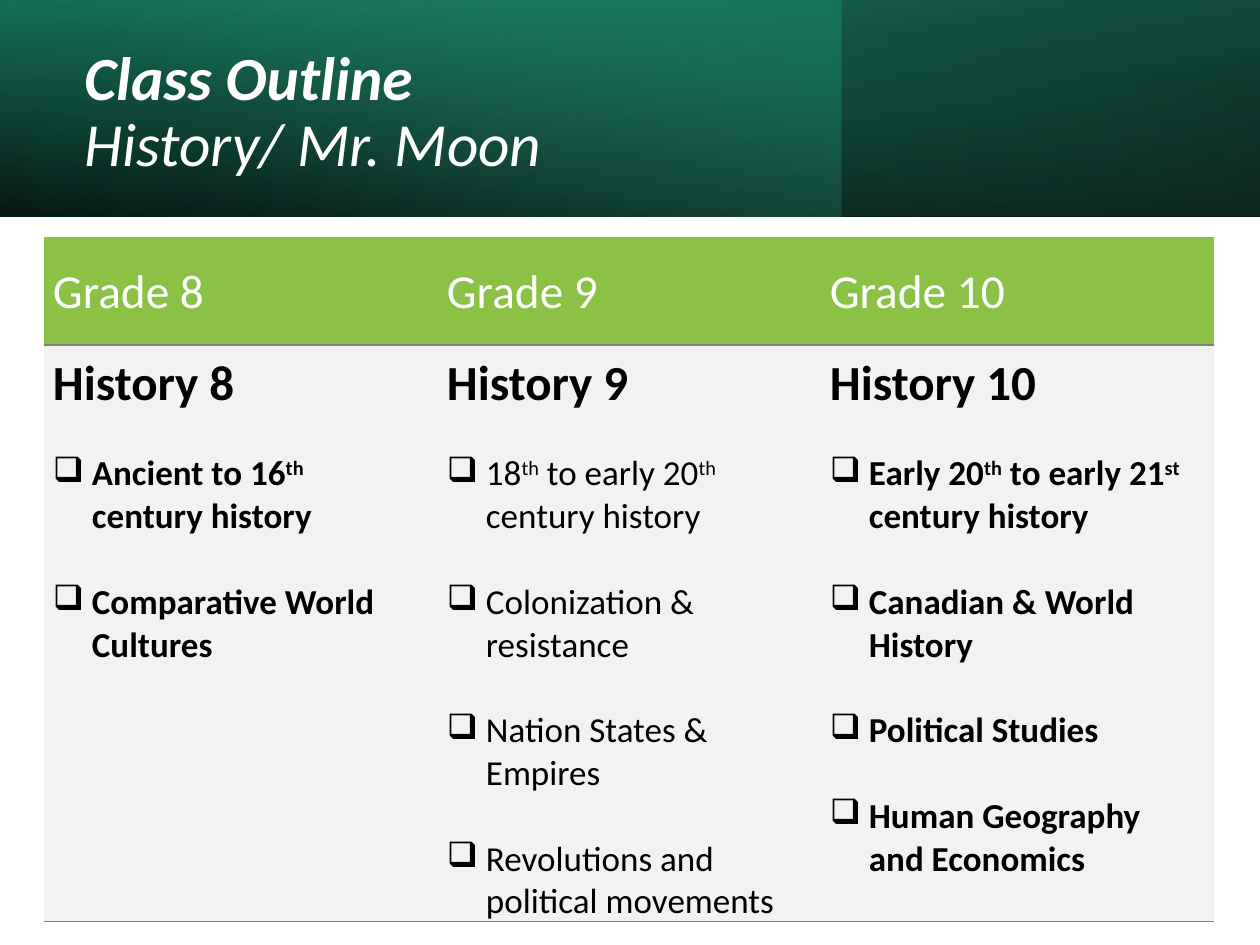
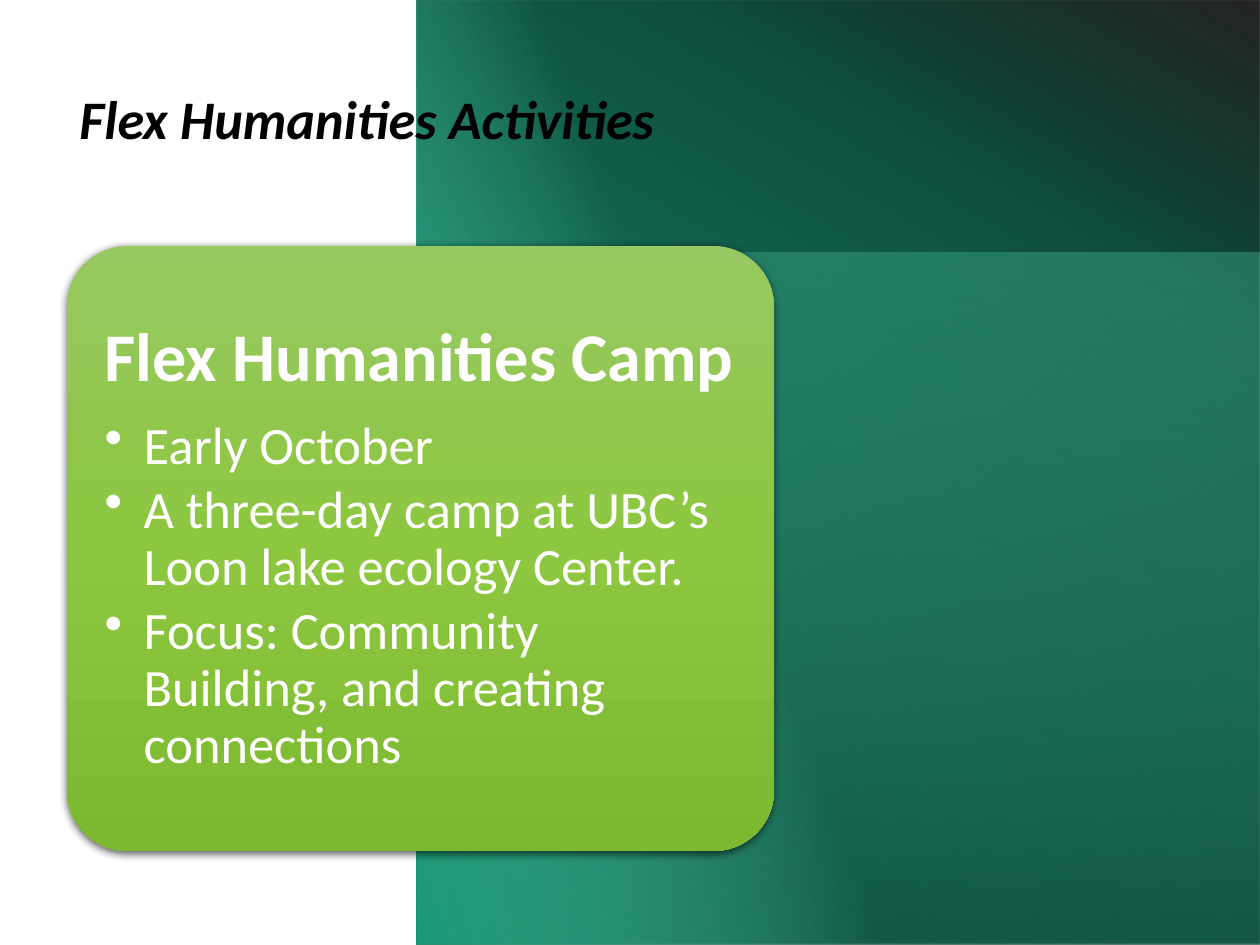
"""Build a two-slide deck: a history class outline and a humanities camp card."""
from dataclasses import dataclass

from pptx import Presentation
from pptx.dml.color import RGBColor
from pptx.enum.shapes import MSO_SHAPE
from pptx.enum.text import MSO_ANCHOR, PP_ALIGN
from pptx.oxml import parse_xml
from pptx.oxml.ns import nsdecls, qn
from pptx.util import Pt


@dataclass(frozen=True)
class Theme:
    font: str = "Calibri"
    white: str = "FFFFFF"
    black: str = "000000"
    deep: str = "16745A"
    green: str = "1D9A78"
    mint: str = "5AE0BB"
    forest: str = "0E4D3C"
    header: str = "8BC145"
    body: str = "F2F2F2"
    rule: str = "808080"
    card: tuple = ("98C862", "8CC73F", "7DB831")
    outline_title: int = 35
    camp_title: int = 31
    grade: int = 27
    course: int = 28
    topic: int = 20
    card_title: int = 39
    card_text: int = 30


theme = Theme()
PX = 914400 / 126
INDENT = 39


def paint_gradient(shape, stops, angle):
    """Fill a shape with (position, colour, opacity) stops, without line or shadow."""
    shape.shadow.inherit = False
    shape.line.fill.background()
    shape.fill.gradient()
    properties = shape._element.spPr
    marks = "".join(
        f'<a:gs pos="{position * 1000}"><a:srgbClr val="{colour}">'
        f'<a:alpha val="{opacity * 1000}"/></a:srgbClr></a:gs>'
        for position, colour, opacity in stops)
    gradient = parse_xml(
        f'<a:gradFill {nsdecls("a")} rotWithShape="1"><a:gsLst>{marks}</a:gsLst>'
        f'<a:lin ang="{angle * 60000}" scaled="0"/></a:gradFill>')
    properties.replace(properties.find(qn("a:gradFill")), gradient)


def add_bullet(para, glyph):
    """Give a paragraph a hanging bullet."""
    properties = para._p.get_or_add_pPr()
    properties.set("marL", str(round(INDENT * PX)))
    properties.set("indent", str(round(-INDENT * PX)))
    properties.append(parse_xml(f'<a:buChar {nsdecls("a")} char="{glyph}"/>'))


deck = Presentation()
deck.slide_width = round(1260 * PX)
deck.slide_height = round(945 * PX)

outline_layers = [
    ((0, 0, 1260, 217), 180, True, 100, [(0, theme.black, 96), (100, theme.deep, 100)]),
    ((0, 0, 841, 217), 0, False, 140, [(0, theme.green, 41), (74, theme.mint, 0)]),
    ((0, 0, 1260, 217), 0, True, 260, [(0, theme.black, 63), (78, theme.green, 15)]),
]
camp_layers = [
    ((417, 0, 843, 945), 0, False, 300,
     [(2, theme.green, 100), (78, theme.forest, 100), (100, theme.black, 85)]),
    ((417, 253, 843, 692), 0, True, 80, [(0, theme.mint, 30), (100, theme.black, 44)]),
    ((302, 115, 945, 715), 90, True, 110, [(56, theme.mint, 0), (100, theme.green, 100)]),
]
slides = [
    (outline_layers, (72, 34, 730, 160), theme.outline_title, theme.white,
     ["Class Outline", "History/ Mr. Moon"]),
    (camp_layers, (67, 44, 1126, 156), theme.camp_title, theme.black,
     ["Flex Humanities Activities"]),
]
pages = []
for layers, title_place, title_size, title_colour, title_lines in slides:
    page = deck.slides.add_slide(deck.slide_layouts[6])
    pages.append(page)
    for place, rotation, flipped, angle, stops in layers:
        layer = page.shapes.add_shape(
            MSO_SHAPE.RECTANGLE, *[round(length * PX) for length in place])
        paint_gradient(layer, stops, angle)
        layer.rotation = rotation
        if flipped:
            layer._element.spPr.find(qn("a:xfrm")).set("flipH", "1")

    title = page.shapes.add_textbox(*[round(length * PX) for length in title_place])
    title.text_frame.word_wrap = True
    title.text_frame.vertical_anchor = MSO_ANCHOR.MIDDLE
    para = title.text_frame.paragraphs[0]
    para.line_spacing = 0.9
    para.font.name = theme.font
    para.font.size = Pt(title_size)
    para.font.italic = True
    para.font.color.rgb = RGBColor.from_string(title_colour)
    for number, line in enumerate(title_lines):
        if number:
            para.add_line_break()
        span = para.add_run()
        span.text = line
        span.font.bold = number == 0

outline_page, camp_page = pages

courses = [
    ("Grade 8", "History 8", 394, True,
     ["Ancient to 16^th^ century history", "Comparative World Cultures"]),
    ("Grade 9", "History 9", 383, False,
     ["18^th^ to early 20^th^ century history", "Colonization & resistance",
      "Nation States & Empires", "Revolutions and political movements"]),
    ("Grade 10", "History 10", 393, True,
     ["Early 20^th^ to early 21^st^ century history", "Canadian & World History",
      "Political Studies", "Human Geography and Economics"]),
]
table = outline_page.shapes.add_table(
    2, len(courses), *[round(length * PX) for length in (44, 237, 1170, 682)]).table
table.first_row = False
table.horz_banding = False
table._tbl.tblPr.find(qn("a:tableStyleId")).text = "{2D5ABB26-0587-4C30-8999-92F81FD0307C}"
table.rows[0].height = round(108 * PX)
table.rows[1].height = round(574 * PX)

for column, (grade, course, width, emphasized, topics) in enumerate(courses):
    table.columns[column].width = round(width * PX)
    grade_cell, topic_cell = table.cell(0, column), table.cell(1, column)
    for cell, fill in ((grade_cell, theme.header), (topic_cell, theme.body)):
        cell.margin_left = cell.margin_top = round(9 * PX)
        cell.margin_right = round(28 * PX)
        cell.margin_bottom = round(6 * PX)
        cell.fill.solid()
        cell.fill.fore_color.rgb = RGBColor.from_string(fill)
    for position, side in enumerate(("lnT", "lnB")):
        topic_cell._tc.get_or_add_tcPr().insert(position, parse_xml(
            f'<a:{side} {nsdecls("a")} w="{Pt(0.75)}"><a:solidFill>'
            f'<a:srgbClr val="{theme.rule}"/></a:solidFill></a:{side}>'))

    grade_cell.vertical_anchor = MSO_ANCHOR.MIDDLE
    para = grade_cell.text_frame.paragraphs[0]
    para.text = grade
    para.font.name = theme.font
    para.font.size = Pt(theme.grade)
    para.font.color.rgb = RGBColor.from_string(theme.white)

    frame = topic_cell.text_frame
    for number, text in enumerate([course] + topics):
        para = frame.add_paragraph() if number else frame.paragraphs[0]
        para.font.name = theme.font
        para.font.size = Pt(theme.topic if number else theme.course)
        para.font.bold = emphasized or number == 0
        para.font.color.rgb = RGBColor.from_string(theme.black)
        if number:
            para.space_before = Pt(22 if number == 1 else 24.4)
            add_bullet(para, "❑")
        for part, words in enumerate(text.split("^")):
            span = para.add_run()
            span.text = words
            if part % 2:
                span._r.get_or_add_rPr().set("baseline", "30000")

card = camp_page.shapes.add_shape(
    MSO_SHAPE.ROUNDED_RECTANGLE, *[round(length * PX) for length in (67, 246, 707, 605)])
card.adjustments[0] = 0.1
paint_gradient(card, [(50 * step, colour, 100) for step, colour in enumerate(theme.card)], 90)
card._element.spPr.find(qn("a:effectLst")).append(parse_xml(
    f'<a:outerShdw {nsdecls("a")} blurRad="{Pt(4.5)}" dist="{Pt(1.5)}" dir="5400000" '
    f'rotWithShape="0"><a:srgbClr val="{theme.black}"><a:alpha val="63000"/>'
    '</a:srgbClr></a:outerShdw>'))
frame = card.text_frame
frame.word_wrap = True
frame.vertical_anchor = MSO_ANCHOR.MIDDLE
frame.margin_left = frame.margin_top = frame.margin_right = frame.margin_bottom = round(20 * PX)
camp_lines = [
    "Flex Humanities Camp",
    "Early October",
    "A three-day camp at UBC’s Loon lake ecology Center.",
    "Focus: Community Building, and creating connections",
]
for number, line in enumerate(camp_lines):
    para = frame.add_paragraph() if number else frame.paragraphs[0]
    para.text = line
    para.alignment = PP_ALIGN.LEFT
    para.line_spacing = 0.9
    para.space_after = Pt(4.5 if number else 13)
    para.font.name = theme.font
    para.font.size = Pt(theme.card_text if number else theme.card_title)
    para.font.bold = number == 0
    para.font.color.rgb = RGBColor.from_string(theme.white)
    if number:
        add_bullet(para, "•")

deck.save("out.pptx")
